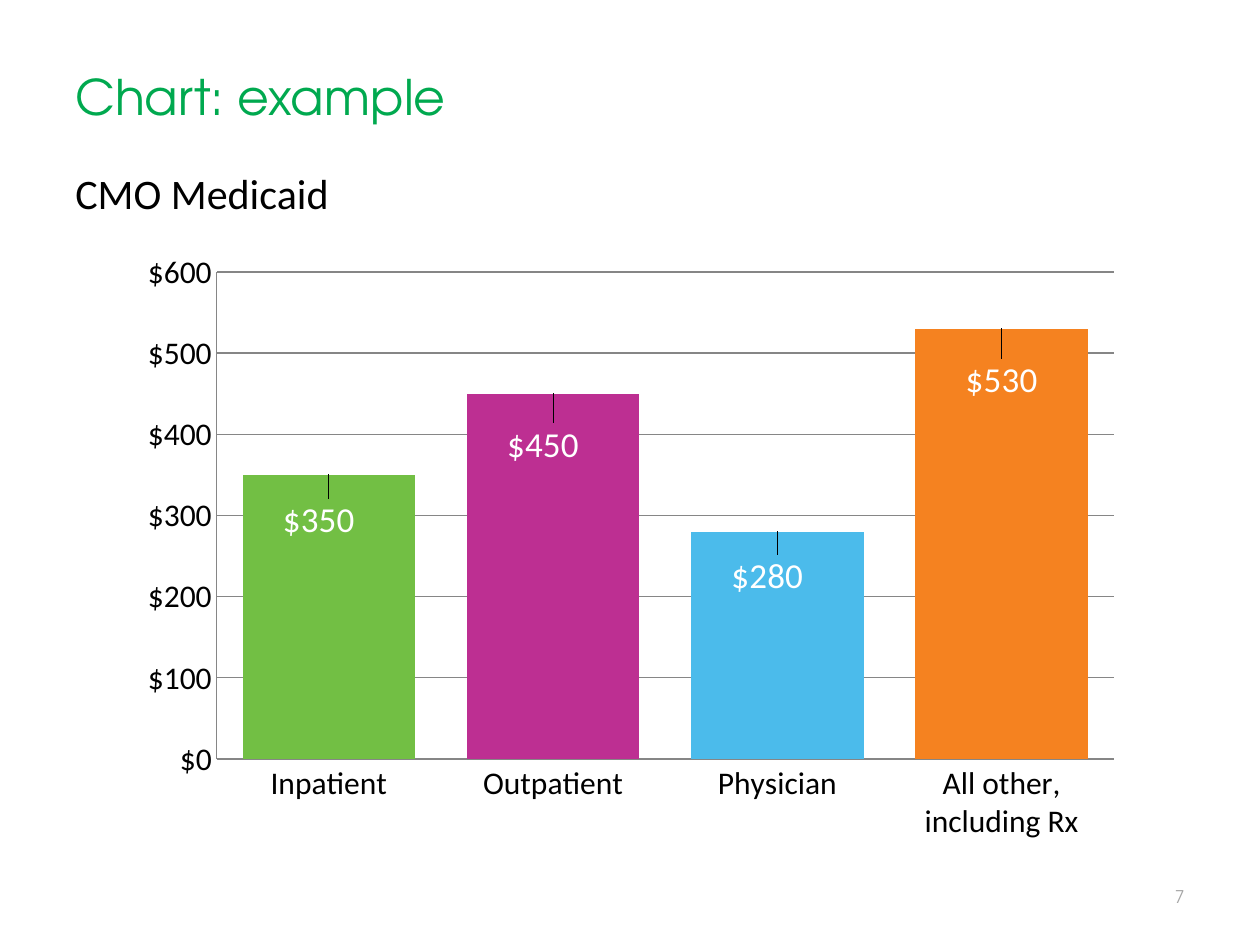
from lxml import etree
from pptx import Presentation
from pptx import util as u
from pptx.chart.data import CategoryChartData
from pptx.dml.color import RGBColor
from pptx.enum import chart as ch, text
from pptx.oxml.ns import qn

Pt = u.Pt
DOLLARS = '"$"#,##0'
GRAY = "868686"


def color(value):
    return RGBColor.from_string(value)


def add_layout(parent, index, **values):
    """Insert a manual chart layout, given as fractions of the chart size."""
    layout = etree.Element(qn("c:layout"))
    manual = etree.SubElement(layout, qn("c:manualLayout"))
    for name, value in values.items():
        etree.SubElement(manual, qn(f"c:{name}")).set("val", str(value))
    parent.insert(index, layout)


presentation = Presentation()
presentation.slide_width, presentation.slide_height = Pt(720), Pt(540)
slide = presentation.slides.add_slide(presentation.slide_layouts[6])

# Title, subtitle and page number
left, middle, right = text.PP_ALIGN.LEFT, text.MSO_ANCHOR.MIDDLE, text.PP_ALIGN.RIGHT
top, bottom = text.MSO_ANCHOR.TOP, text.MSO_ANCHOR.BOTTOM
texts = [
    ("Chart: example", (36, 12, 648, 63), 28, "TeX Gyre Adventor", "00A94F", left, bottom),
    ("CMO Medicaid", (36, 92, 648, 40), 24, "Calibri", "000000", left, top),
    ("7", (624, 502.5, 60, 19.5), 10, "TeX Gyre Adventor", "A6A6A6", right, middle),
]
for words, box, size, font_name, font_color, alignment, anchor in texts:
    shape = slide.shapes.add_textbox(*map(Pt, box))
    frame = shape.text_frame
    frame.word_wrap = True
    frame.vertical_anchor = anchor
    frame.text = words
    paragraph = frame.paragraphs[0]
    paragraph.alignment = alignment
    font = paragraph.runs[0].font
    font.size, font.name = Pt(size), font_name
    font.color.rgb = color(font_color)

# Column chart
data = CategoryChartData(number_format=DOLLARS)
data.categories = ["Inpatient", "Outpatient", "Physician", "All other, including Rx"]
data.add_series("Series 1", [350, 450, 280, 530])
chart = slide.shapes.add_chart(
    ch.XL_CHART_TYPE.COLUMN_CLUSTERED, Pt(72), Pt(138), Pt(576), Pt(348), data
).chart
chart.has_title = False
chart.has_legend = False
chart.font.size, chart.font.name = Pt(18), "Calibri"
chart.font.color.rgb = color("000000")

plot_area = chart.plots[0]._element.getparent()
for old_layout in plot_area.findall(qn("c:layout")):
    plot_area.remove(old_layout)
add_layout(plot_area, 0, layoutTarget="inner", xMode="edge", yMode="edge",
           x=0.09, y=0.05, w=0.89, h=0.8)

value_axis = chart.value_axis
value_axis.minimum_scale, value_axis.maximum_scale = 0, 600
value_axis.major_unit = 100
value_axis.has_major_gridlines = True
value_axis.tick_labels.number_format = DOLLARS
value_axis.tick_labels.number_format_is_linked = False
for axis in (value_axis, chart.category_axis):
    axis.major_tick_mark = axis.minor_tick_mark = ch.XL_TICK_MARK.NONE
for line in (value_axis.format.line, chart.category_axis.format.line,
             value_axis.major_gridlines.format.line):
    line.color.rgb = color(GRAY)
    line.width = Pt(0.75)

plot = chart.plots[0]
plot.gap_width = 30
plot.vary_by_categories = False
series = plot.series[0]
series.format.fill.solid()
series.format.fill.fore_color.rgb = color("72BF44")
labels = series.data_labels
labels.show_value = True
labels.number_format, labels.number_format_is_linked = DOLLARS, False
labels.font.size, labels.font.name = Pt(20), "Calibri"
labels.font.color.rgb = color("FFFFFF")

# Bar colours, with each label nudged down from the top of its bar
bars = [("72BF44", -0.01, 0.03), ("BD2F92", -0.01, 0.04),
        ("4BBBEB", -0.01, 0.03), ("F58220", 0, 0.04)]
for index, (bar_color, shift_x, shift_y) in enumerate(bars):
    point = series.points[index]
    point.format.fill.solid()
    point.format.fill.fore_color.rgb = color(bar_color)
    label = point.data_label
    label.font.size, label.font.name = Pt(20), "Calibri"
    label.font.color.rgb = color("FFFFFF")
    label.position = ch.XL_LABEL_POSITION.INSIDE_END
    add_layout(labels._element.findall(qn("c:dLbl"))[index], 1, x=shift_x, y=shift_y)

presentation.save("out.pptx")
